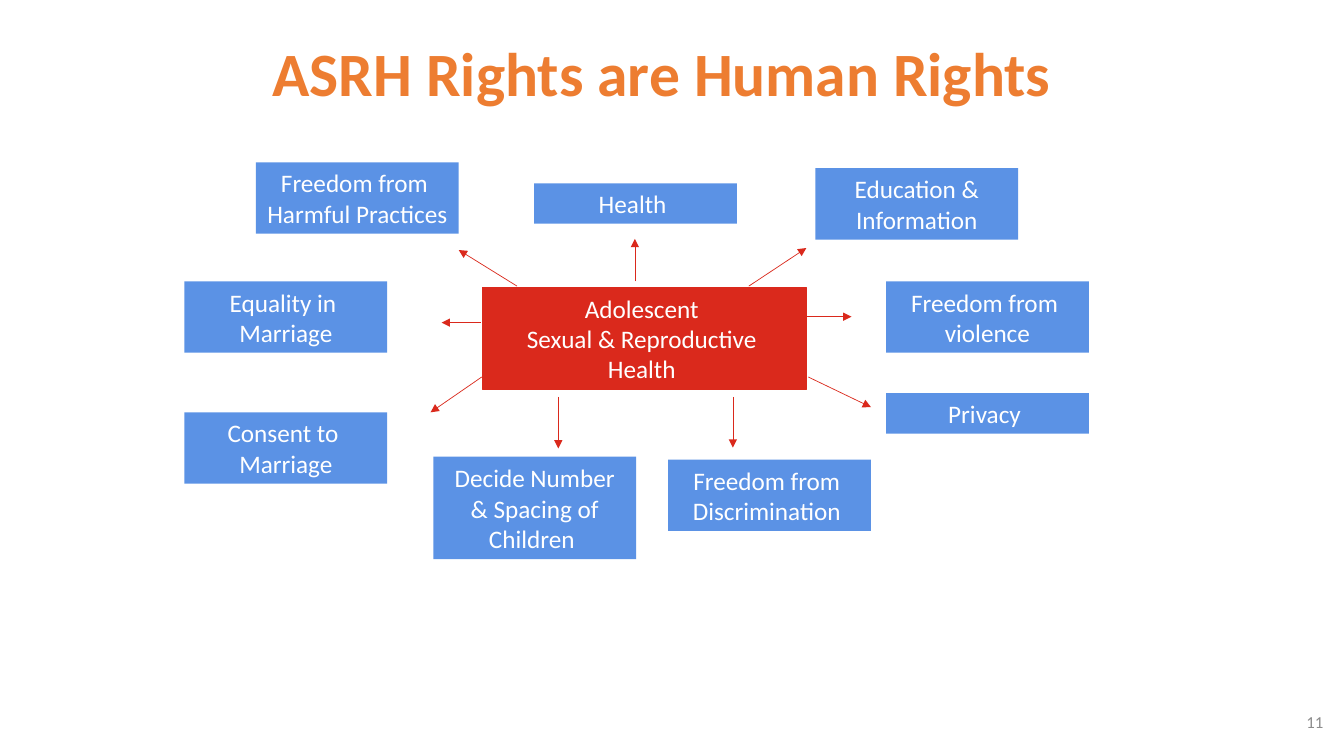
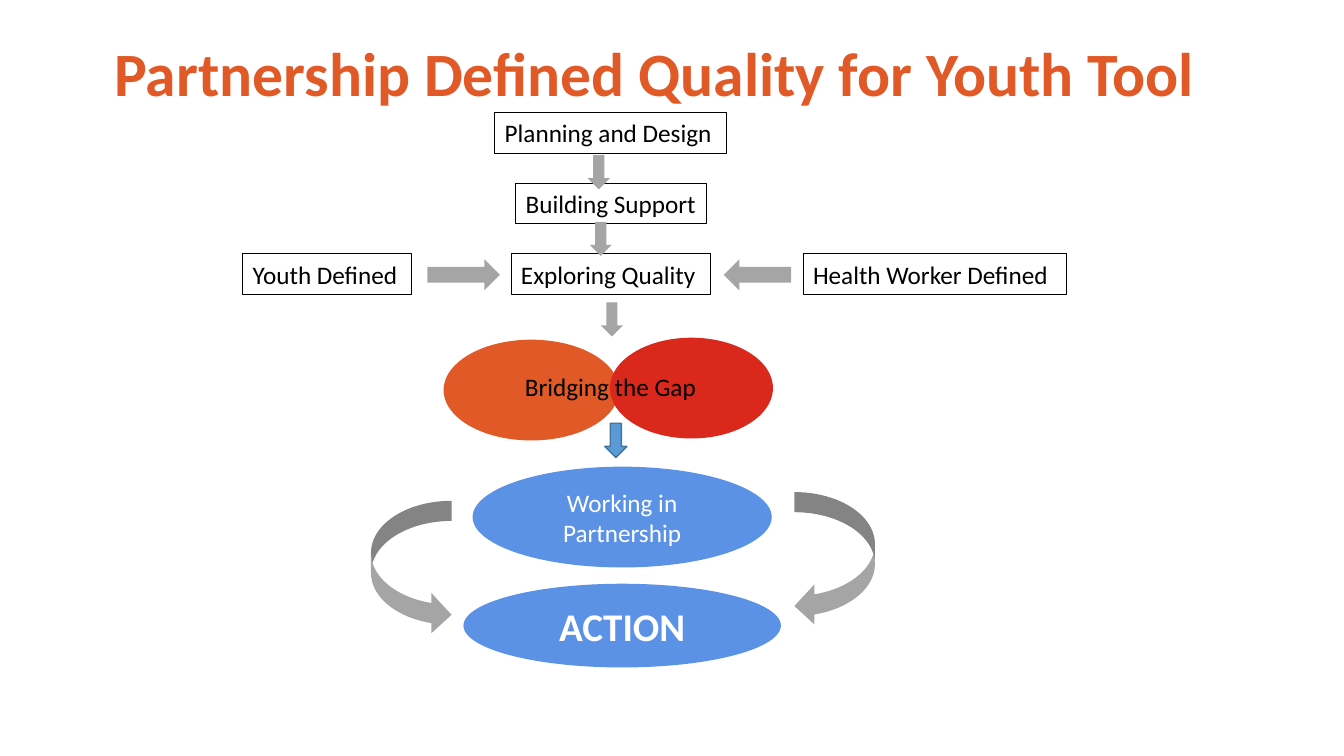
"""Build two slides on adolescent health rights and a youth quality tool."""
from lxml.etree import SubElement
from pptx import Presentation
from pptx.dml.color import RGBColor as RGB
from pptx.enum.shapes import MSO_CONNECTOR as Link, MSO_SHAPE as Form
from pptx.enum.text import MSO_ANCHOR as Anchor, PP_ALIGN as Align
from pptx.oxml.ns import qn
from pptx.util import Cm, Pt

HUES = {
    "gold": "ED7D31", "rust": "E15926", "red": "DA291C", "blue": "5B92E5",
    "sky": "5B9BD5", "navy": "43739E", "grey": "A5A5A5", "dim": "8C8C8C",
    "black": "000000", "white": "FFFFFF",
}
NODE = (5.11, 1.02)
STEP = 0.78
DOWN = (0.56, 0.86)


def hue(name):
    return RGB.from_string(HUES[name])


def put(item, fmt):
    for key, val in fmt.items():
        setattr(item, key, val)


def write(shape, text, ink="white", size=18, bold=False, align=Align.CENTER,
          wrap=True, lead=None):
    frame = shape.text_frame
    put(frame, {"text": text, "word_wrap": wrap,
                "vertical_anchor": Anchor.MIDDLE})
    for para in frame.paragraphs:
        put(para, {"alignment": align, "line_spacing": lead})
        put(para.font, {"name": "Calibri", "size": Pt(size), "bold": bold})
        para.font.color.rgb = hue(ink)


def draw(slide, form, at, fill=None, edge=None, width=0.75):
    shape = slide.shapes.add_shape(form, *map(Cm, at))
    shape.shadow.inherit = False
    if fill:
        shape.fill.solid()
        shape.fill.fore_color.rgb = hue(fill)
    else:
        shape.fill.background()
    if edge:
        shape.line.color.rgb = hue(edge)
        shape.line.width = Pt(width)
    else:
        shape.line.fill.background()
    return shape


def note(slide, at, text, **fmt):
    box = slide.shapes.add_textbox(*map(Cm, at))
    write(box, text, **fmt)
    return box


def title(slide, text, ink, inset):
    box = note(slide, (2.26, 0.1, 29.21, 3.68), text, ink=ink, size=44,
               bold=True, lead=0.9)
    box.text_frame.margin_right = Cm(inset)


def node(slide, left, top, text, rows):
    wide, high = NODE
    at = (left, top, wide, high + STEP * (rows - 1))
    write(draw(slide, Form.RECTANGLE, at, "blue"), text,
          wrap="\n" not in text)


def label(slide, left, top, wide, text):
    box = draw(slide, Form.RECTANGLE, (left, top, wide, 1.02), edge="black")
    write(box, text, ink="black", align=Align.LEFT, wrap=False)


def arrow(slide, *ends):
    link = slide.shapes.add_connector(Link.STRAIGHT, *map(Cm, ends))
    link.line.color.rgb = hue("red")
    link.line.width = Pt(0.5)
    props = link.element.spPr
    SubElement(props.get_or_add_ln(), qn("a:tailEnd"), type="triangle")
    SubElement(props, qn("a:effectLst"))


def rights(slide):
    title(slide, "ASRH Rights are Human Rights", "gold", 0.6)
    core = draw(slide, Form.RECTANGLE, (12.17, 7.24, 8.15, 2.57), "red", "red")
    write(core, "Adolescent \nSexual & Reproductive \nHealth ")
    for item in (
        (6.45, 4.09, "Freedom from \nHarmful Practices", 2),
        (4.65, 7.09, "Equality in \nMarriage", 2),
        (4.65, 10.39, "Consent to \nMarriage", 2),
        (10.92, 11.51, "Decide Number & Spacing of Children ", 3),
        (16.84, 11.58, "Freedom from \nDiscrimination ", 2),
        (22.33, 9.91, "Privacy ", 1),
        (20.55, 4.24, "Education & Information", 2),
        (22.33, 7.09, "Freedom from \nviolence", 2),
        (13.46, 4.62, "Health ", 1),
    ):
        node(slide, *item)
    for ends in (
        (16, 7.09, 16, 6.02), (13.03, 7.21, 11.56, 6.3),
        (18.87, 7.21, 20.32, 6.25), (12.12, 8.13, 11.13, 8.13),
        (20.32, 7.98, 21.46, 7.98), (12.14, 9.5, 10.85, 10.39),
        (20.37, 9.5, 21.95, 10.26), (14.07, 10, 14.07, 11.3),
        (18.47, 10, 18.47, 11.28),
    ):
        arrow(slide, *ends)
    note(slide, (25.98, 17.68, 7.62, 1.02), "11", ink="dim", size=12,
         align=Align.RIGHT)


def tool(slide):
    title(slide, "Partnership Defined Quality for Youth Tool", "rust", 0.96)
    for item in (
        (12.47, 2.84, 5.84, "Planning and Design"),
        (13, 4.62, 4.8, "Building Support"),
        (6.12, 6.4, 4.24, "Youth Defined"),
        (12.88, 6.4, 5.03, "Exploring Quality"),
        (20.24, 6.4, 6.63, "Health Worker Defined"),
    ):
        label(slide, *item)
    draw(slide, Form.OVAL, (11.18, 8.56, 4.42, 2.54), "rust")
    draw(slide, Form.OVAL, (15.37, 8.51, 4.11, 2.54), "red")
    note(slide, (12.98, 9.22, 5.21, 1.02), "Bridging the Gap", ink="black",
         align=Align.LEFT, wrap=False)
    for at, text, size, bold in (
        ((11.91, 11.76, 7.54, 2.54), "Working in Partnership", 18, False),
        ((11.68, 14.71, 8, 2.11), "ACTION", 28, True),
    ):
        write(draw(slide, Form.OVAL, at, "blue"), text, size=size, bold=bold)
    for form, *at in (
        (Form.DOWN_ARROW, 14.81, 3.91, *DOWN),
        (Form.DOWN_ARROW, 14.86, 5.59, *DOWN),
        (Form.DOWN_ARROW, 15.14, 7.62, *DOWN),
        (Form.RIGHT_ARROW, 10.77, 6.53, 1.83, 0.79),
        (Form.LEFT_ARROW, 18.24, 6.53, 1.7, 0.79),
        (Form.CURVED_RIGHT_ARROW, 9.35, 12.62, 2.03, 3.38),
        (Form.CURVED_LEFT_ARROW, 20.02, 12.4, 2.03, 3.38),
    ):
        draw(slide, form, at, "grey")
    draw(slide, Form.DOWN_ARROW, (15.24, 10.67, *DOWN), "sky", "navy", 1)


def main():
    deck = Presentation()
    put(deck, {"slide_width": Cm(33.87), "slide_height": Cm(19.05)})
    for build in (rights, tool):
        build(deck.slides.add_slide(deck.slide_layouts[6]))
    deck.save("out.pptx")


if __name__ == "__main__":
    main()
